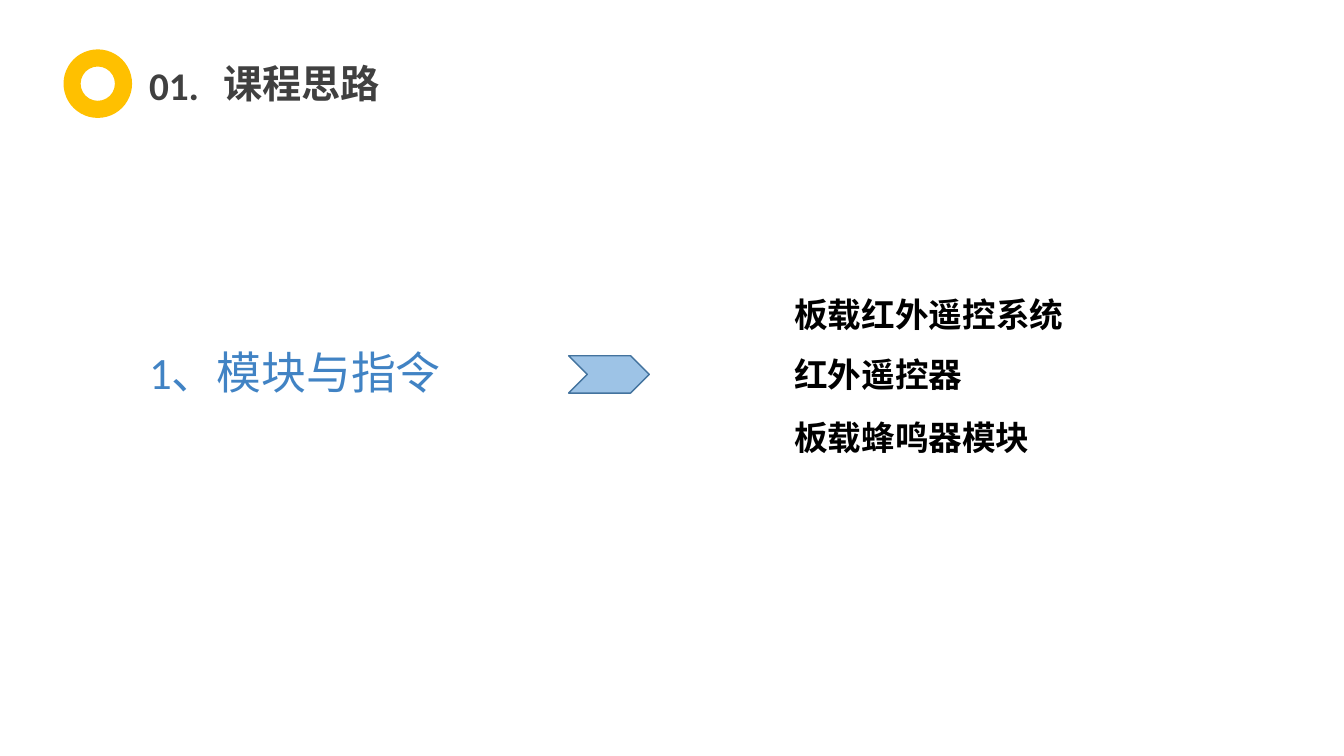
"""Builds the course outline slide on modules and instructions."""
from pptx import Presentation
from pptx.dml.color import RGBColor
from pptx.enum.shapes import MSO_SHAPE as Shape
from pptx.enum.text import MSO_AUTO_SIZE as AutoSize, PP_ALIGN as Align
from pptx.util import Inches, Pt

COLORS = {
    "heading": "404040",
    "ring": "FFC000",
    "topic": "4183C4",
    "arrow": "9DC3E6",
    "arrow_line": "43739E",
    "item": "000000",
}


class SlideBuilder:
    """Holds the style and the current slide."""

    def __init__(self, slide, font="Calibri"):
        self.s = slide
        self.font = font

    def color(self, name):
        return RGBColor.from_string(COLORS[name])

    def text(self, box, text, size, color, bold=False, align=Align.LEFT, wrap=False):
        sp = self.s.shapes.add_textbox(*map(Inches, box))
        tf = sp.text_frame
        tf.word_wrap = wrap
        tf.auto_size = AutoSize.SHAPE_TO_FIT_TEXT
        p = tf.paragraphs[0]
        p.alignment = align
        r = p.add_run()
        r.text = text
        r.font.name = self.font
        r.font.size = Pt(size)
        r.font.bold = bold
        r.font.color.rgb = self.color(color)

    def shape(self, kind, box, fill, line=None):
        sp = self.s.shapes.add_shape(kind, *map(Inches, box))
        sp.shadow.inherit = False
        sp.fill.solid()
        sp.fill.fore_color.rgb = self.color(fill)
        if line:
            sp.line.color.rgb = self.color(line)
            sp.line.width = Pt(1)
        else:
            sp.line.fill.background()


def main():
    prs = Presentation()
    prs.slide_width, prs.slide_height = Inches(13.33), Inches(7.5)
    b = SlideBuilder(prs.slides.add_slide(prs.slide_layouts[6]))

    b.text((2.1, 0.54, 1.78, 0.57), "课程思路", 28, "heading", True, Align.CENTER)
    b.text((1.38, 0.56, 0.75, 0.57), "01.", 28, "heading", True)
    b.shape(Shape.DONUT, (0.63, 0.49, 0.68, 0.68), "ring")

    b.text((1.38, 3.37, 3.12, 0.64), "1、模块与指令", 32, "topic", wrap=True)
    b.shape(Shape.CHEVRON, (5.64, 3.53, 0.8, 0.37), "arrow", "arrow_line")

    items = [
        (2.87, 2.91, "板载红外遥控系统"),
        (3.46, 1.89, "红外遥控器"),
        (4.09, 2.57, "板载蜂鸣器模块"),
    ]
    for top, width, name in items:
        b.text((7.78, top, width, 0.5), name, 24, "item", True)

    prs.save("out.pptx")


if __name__ == "__main__":
    main()
